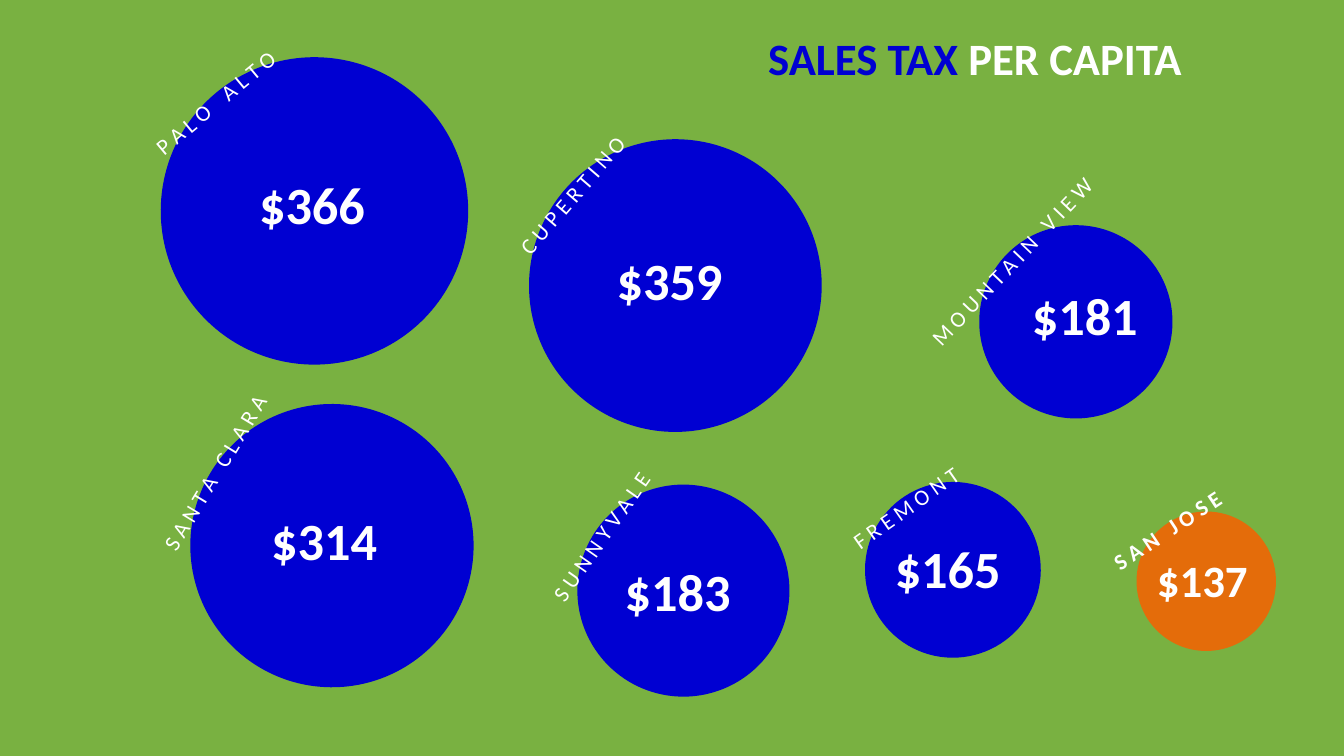
from pptx import Presentation
from pptx.dml.color import RGBColor
from pptx.enum.shapes import MSO_SHAPE
from pptx.enum.text import MSO_ANCHOR, MSO_AUTO_SIZE, PP_ALIGN
from pptx.util import Inches, Pt

GREEN = RGBColor(0x79, 0xB1, 0x41)
BLUE = RGBColor(0x00, 0x00, 0xD2)
ORANGE = RGBColor(0xE4, 0x6C, 0x0A)
WHITE = RGBColor(0xFF, 0xFF, 0xFF)


def add_run(p, text, size, color=WHITE, bold=False):
    r = p.add_run()
    r.text = text
    r.font.name = "Calibri"
    r.font.size = Pt(size)
    r.font.bold = bold
    r.font.color.rgb = color
    return r


def add_box(s, left, top, width, height):
    sp = s.shapes.add_textbox(Inches(left), Inches(top), Inches(width), Inches(height))
    sp.text_frame.word_wrap = False
    return sp


prs = Presentation()
prs.slide_width = Inches(10)
prs.slide_height = Inches(10) * 9 // 16
s = prs.slides.add_slide(prs.slide_layouts[5])
s.background.fill.solid()
s.background.fill.fore_color.rgb = GREEN

title = s.shapes.title
title.left, title.top = Inches(3.25), Inches(0.18)
title.width, title.height = Inches(8.01), Inches(0.5)
tf = title.text_frame
tf.word_wrap = True
tf.auto_size = MSO_AUTO_SIZE.SHAPE_TO_FIT_TEXT
tf.vertical_anchor = MSO_ANCHOR.TOP
p = tf.paragraphs[0]
p.alignment = PP_ALIGN.CENTER
add_run(p, "SALES TAX ", 24, BLUE, True)
add_run(p, "PER CAPITA", 24, WHITE, True)

cities = [
    ("PALO ALTO", (1.21, 0.44, 2.26), (1.07, 0.36, 2.45, 2.47), 320.2, "$366", (1.83, 1.23)),
    ("CUPERTINO", (3.95, 1.05, 2.15), (4.04, 0.77, 2.75, 3.36), 310.8, "$359", (4.49, 1.8)),
    ("SANTA CLARA", (1.43, 3.02, 2.08), (1.68, 2.63, 2.45, 3.36), 301.2, "$314", (1.92, 3.73)),
    ("SUNNYVALE", (4.31, 3.62, 1.55), (4.5, 3.19, 2.45, 3.36), 305, "$183", (4.55, 4.11)),
    ("MOUNTAIN VIEW", (7.3, 1.69, 1.41), (7.41, 1.32, 2.45, 3.36), 313.6, "$181", (7.58, 2.06)),
    ("FREMONT", (6.45, 3.6, 1.28), (6.62, 3.33, 2.12, 3.58), 325, "$165", (6.56, 3.94)),
    ("SAN JOSE", (8.47, 3.82, 1.01), (8.78, 3.44, 2.16, 4.57), 326.6, "$137", (8.51, 4.06)),
]

for city, (left, top, size), label_box, angle, amount, (x, y) in cities:
    home = city == "SAN JOSE"
    color = ORANGE if home else BLUE
    circle = s.shapes.add_shape(
        MSO_SHAPE.OVAL, Inches(left), Inches(top), Inches(size), Inches(size))
    circle.rotation = 11.9
    circle.shadow.inherit = False
    circle.fill.solid()
    circle.fill.fore_color.rgb = color
    circle.line.color.rgb = color
    circle.line.width = Pt(2)

    label = add_box(s, *label_box)
    label.rotation = angle
    p = label.text_frame.paragraphs[0]
    p.alignment = PP_ALIGN.CENTER
    for i, word in enumerate(city.split()):
        if i:
            gap = add_run(p, " ", 12, bold=home)
            gap.font._element.set("spc", "810" if city == "PALO ALTO" else "540")
        add_run(p, " ".join(word), 12, bold=home)

    width, height, pt = (0.94, 0.51, 24) if home else (1.07, 0.57, 28)
    value = add_box(s, x, y, width, height)
    value.text_frame.auto_size = MSO_AUTO_SIZE.SHAPE_TO_FIT_TEXT
    add_run(value.text_frame.paragraphs[0], amount, pt, bold=True)

prs.save("out.pptx")
